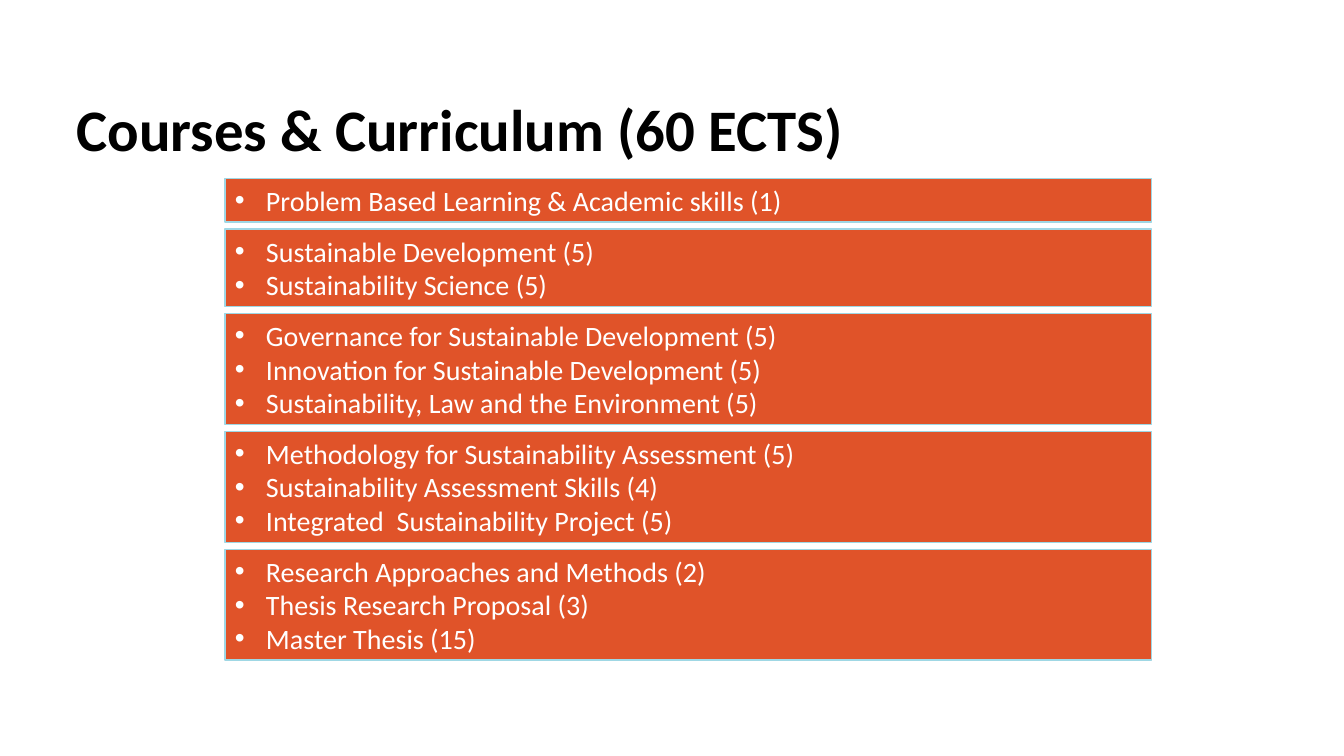
from lxml.etree import SubElement
from pptx import Presentation
from pptx.dml.color import RGBColor
from pptx.enum.shapes import MSO_SHAPE
from pptx.enum.text import MSO_ANCHOR, MSO_AUTO_SIZE, PP_ALIGN
from pptx.oxml.ns import qn
from pptx.util import Inches, Pt

TITLE = "Courses & Curriculum (60 ECTS)"
COURSE_GROUPS = [
    ["Problem Based Learning & Academic skills (1)"],
    ["Sustainable Development (5)", "Sustainability Science (5)"],
    [
        "Governance for Sustainable Development (5)",
        "Innovation for Sustainable Development (5)",
        "Sustainability, Law and the Environment (5)",
    ],
    [
        "Methodology for Sustainability Assessment (5)",
        "Sustainability Assessment Skills (4)",
        "Integrated  Sustainability Project (5)",
    ],
    [
        "Research Approaches and Methods (2)",
        "Thesis Research Proposal (3)",
        "Master Thesis (15)",
    ],
]
TITLE_FORMAT = {"name": "Calibri", "size": Pt(42), "bold": True}
COURSE_FORMAT = {"name": "Calibri", "size": Pt(20), "bold": False}


def paint(color_format, hex_color):
    """Give a colour format the colour of a hex string."""
    color_format.rgb = RGBColor.from_string(hex_color)


def write(paragraph, text, font_format, hex_color):
    """Add a formatted run to a paragraph."""
    run = paragraph.add_run()
    run.text = text
    for attribute, value in font_format.items():
        setattr(run.font, attribute, value)
    paint(run.font.color, hex_color)


def add_bullet(paragraph, indent):
    """Give a paragraph a hanging round bullet."""
    properties = paragraph._p.get_or_add_pPr()
    properties.set("marL", str(indent))
    properties.set("indent", str(-indent))
    SubElement(properties, qn("a:buFont")).set("typeface", "Arial")
    SubElement(properties, qn("a:buChar")).set("char", "•")


def add_title(slide, left, top, width, height):
    """Place the heading in its box."""
    heading = slide.shapes.add_textbox(left, top, width, height).text_frame
    heading.word_wrap = True
    heading.paragraphs[0].line_spacing = 0.9
    write(heading.paragraphs[0], TITLE, TITLE_FORMAT, "000000")


def add_course_group(slide, courses, left, top, width, height):
    """Place one bar that lists a group of courses."""
    bar = slide.shapes.add_shape(MSO_SHAPE.RECTANGLE, left, top, width, height)
    bar.shadow.inherit = False
    bar.fill.solid()
    paint(bar.fill.fore_color, "E05329")
    paint(bar.line.color, "9FD7E4")
    bar.line.width = Pt(1)
    frame = bar.text_frame
    frame.word_wrap = True
    frame.auto_size = MSO_AUTO_SIZE.SHAPE_TO_FIT_TEXT
    frame.vertical_anchor = MSO_ANCHOR.TOP
    for index, course in enumerate(courses):
        paragraph = frame.add_paragraph() if index else frame.paragraphs[0]
        paragraph.alignment = PP_ALIGN.LEFT
        add_bullet(paragraph, Inches(0.31))
        write(paragraph, course, COURSE_FORMAT, "FFFFFF")


def add_curriculum(slide, left, top, width):
    """Stack the course groups, each as tall as its lines need."""
    for courses in COURSE_GROUPS:
        height = Inches(0.1) + len(courses) * Pt(24)
        add_course_group(slide, courses, left, top, width, height)
        top += height + Inches(0.07)


def main():
    """Build the slide and save it."""
    presentation = Presentation()
    presentation.slide_width = Inches(13.33)
    presentation.slide_height = Inches(7.5)
    slide = presentation.slides.add_slide(presentation.slide_layouts[6])
    add_title(slide, Inches(0.66), Inches(0.95), Inches(8.8), Inches(1.25))
    add_curriculum(slide, Inches(2.23), Inches(1.77), Inches(9.19))
    presentation.save("out.pptx")


if __name__ == "__main__":
    main()
